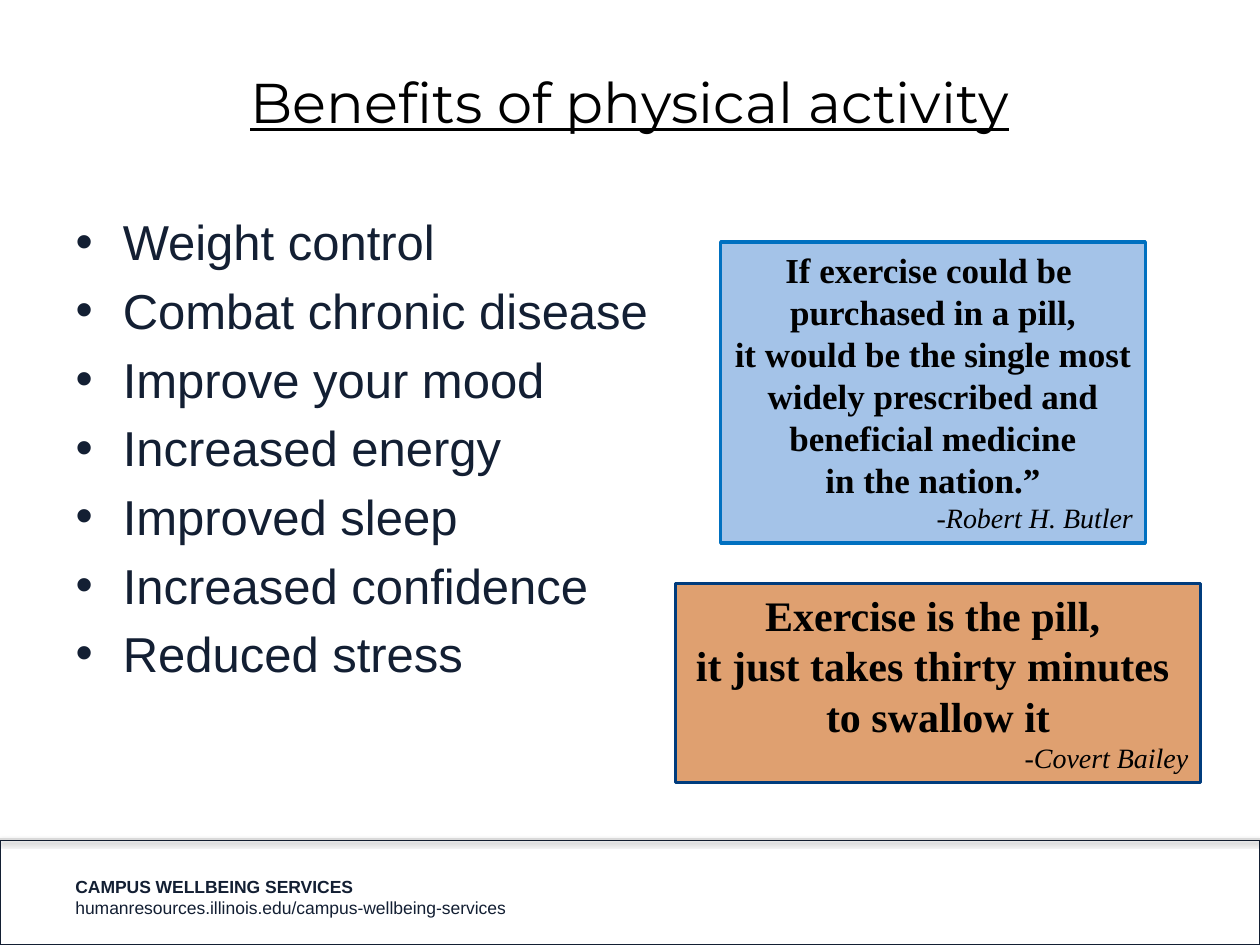
from dataclasses import dataclass

from lxml import etree
from pptx import Presentation
from pptx import util as u
from pptx.dml.color import RGBColor
from pptx.enum import shapes, text
from pptx.oxml import ns

NAVY = "131F33"
BLACK = "000000"
WHITE = "FFFFFF"
SERIF = "Times New Roman"
SLIDE_WIDTH, SLIDE_HEIGHT = u.Inches(10), u.Inches(7.5)


@dataclass(frozen=True)
class Box:
    """A place on the slide, in percent of its width and height."""
    left: float
    top: float
    width: float
    height: float

    def lengths(self) -> tuple[int, int, int, int]:
        return (round(SLIDE_WIDTH * self.left / 100),
                round(SLIDE_HEIGHT * self.top / 100),
                round(SLIDE_WIDTH * self.width / 100),
                round(SLIDE_HEIGHT * self.height / 100))


@dataclass(frozen=True)
class Quote:
    box: Box
    lines: tuple[str, ...]
    author: str
    size: int
    fill: str
    opacity: int
    border: str
    wrap: bool


TITLE_BOX = Box(5, 2.4, 90, 16.67)
LIST_BOX = Box(5, 21.07, 90, 66)
FOOTER_BOX = Box(0, 88.93, 100, 11.07)
RULE_BOX = Box(0, 88.8, 100, 0)
CONTACT_BOX = Box(5, 92, 38.3, 5.87)

BENEFITS = ("Weight control", "Combat chronic disease", "Improve your mood",
            "Increased energy", "Improved sleep", "Increased confidence",
            "Reduced stress")

QUOTES = (
    Quote(Box(57.2, 25.6, 33.7, 31.87),
          ("If exercise could be ", "purchased in a pill,",
           "it would be the single most", "widely prescribed and",
           "beneficial medicine", "in the nation.”"),
          "-Robert H. Butler", 20, "8EB4E3", 80, "0070C0", False),
    Quote(Box(53.6, 61.73, 41.7, 21.07),
          ("Exercise is the pill, ", "it just takes thirty minutes ",
           "to swallow it"),
          "-Covert Bailey", 24, "C85D0A", 58, "003C7D", True),
)


def colour(value: str) -> RGBColor:
    return RGBColor.from_string(value)


def place(shape, box: Box) -> None:
    shape.left, shape.top, shape.width, shape.height = box.lengths()


def format_font(font, color: str, **values) -> None:
    for name, value in values.items():
        setattr(font, name, u.Pt(value) if name == "size" else value)
    font.color.rgb = colour(color)


def add_paragraph(frame, index: int, words: str):
    paragraph = frame.paragraphs[0] if index == 0 else frame.add_paragraph()
    paragraph.add_run().text = words
    return paragraph


def set_line(line, color: str, width: float) -> None:
    line.color.rgb = colour(color)
    line.width = u.Pt(width)


def add_shadow(shape, opacity: int, blur: float, distance: float) -> None:
    """Cast a black shadow straight down."""
    properties = shape._element.spPr
    effects = etree.SubElement(properties, ns.qn("a:effectLst"))
    shadow = etree.SubElement(
        effects, ns.qn("a:outerShdw"), blurRad=str(u.Pt(blur)),
        dist=str(u.Pt(distance)), dir=str(90 * 60000), rotWithShape="0")
    black = etree.SubElement(shadow, ns.qn("a:srgbClr"), val=BLACK)
    etree.SubElement(black, ns.qn("a:alpha"), val=str(opacity * 1000))


def add_rectangle(slide, box: Box, fill: str, border: str, width: float):
    shape = slide.shapes.add_shape(shapes.MSO_SHAPE.RECTANGLE, *box.lengths())
    shape.fill.solid()
    shape.fill.fore_color.rgb = colour(fill)
    set_line(shape.line, border, width)
    return shape


def add_footer(slide) -> None:
    band = add_rectangle(slide, FOOTER_BOX, WHITE, NAVY, 0.75)
    add_shadow(band, 35, 3.1, 1.8)

    left, top, width, _ = RULE_BOX.lengths()
    rule = slide.shapes.add_connector(
        shapes.MSO_CONNECTOR.STRAIGHT, left, top, left + width, top)
    set_line(rule.line, "D9D9D9", 1)
    add_shadow(rule, 38, 3.1, 1.6)

    frame = slide.shapes.add_textbox(*CONTACT_BOX.lengths()).text_frame
    frame.word_wrap = True
    contact = ("CAMPUS WELLBEING SERVICES",
               "humanresources.illinois.edu/campus-wellbeing-services")
    for index, words in enumerate(contact):
        paragraph = add_paragraph(frame, index, words)
        format_font(paragraph.runs[0].font, NAVY, name="Arial", size=10,
                    bold=index == 0)


def fill_title(title) -> None:
    place(title, TITLE_BOX)
    paragraph = add_paragraph(title.text_frame, 0, "Benefits of physical activity")
    paragraph.alignment = text.PP_ALIGN.CENTER
    format_font(paragraph.runs[0].font, BLACK, name="Montserrat", size=32,
                underline=True)


def fill_benefits(body) -> None:
    """Fill the list; bullets and later gaps come from the template."""
    place(body, LIST_BOX)
    frame = body.text_frame
    frame.auto_size = text.MSO_AUTO_SIZE.NONE
    frame.margin_top = u.Inches(0.1)
    for index, benefit in enumerate(BENEFITS):
        paragraph = add_paragraph(frame, index, benefit)
        format_font(paragraph.runs[0].font, NAVY, name="Arial", size=28)
    frame.paragraphs[0].space_before = u.Pt(0)


def add_quote(slide, quote: Quote) -> None:
    shape = add_rectangle(slide, quote.box, quote.fill, quote.border, 2)
    shape.shadow.inherit = False
    fill_color = shape._element.spPr.find(
        f"{ns.qn('a:solidFill')}/{ns.qn('a:srgbClr')}")
    etree.SubElement(fill_color, ns.qn("a:alpha"), val=str(quote.opacity * 1000))

    frame = shape.text_frame
    frame.word_wrap = quote.wrap
    frame.auto_size = text.MSO_AUTO_SIZE.SHAPE_TO_FIT_TEXT
    frame.vertical_anchor = text.MSO_ANCHOR.TOP
    for index, words in enumerate((*quote.lines, quote.author)):
        is_author = index == len(quote.lines)
        paragraph = add_paragraph(frame, index, words)
        paragraph.alignment = (text.PP_ALIGN.RIGHT if is_author
                               else text.PP_ALIGN.CENTER)
        format_font(paragraph.runs[0].font, BLACK, name=SERIF,
                    size=16 if is_author else quote.size,
                    bold=not is_author, italic=is_author)


def main() -> None:
    presentation = Presentation()
    presentation.slide_width = SLIDE_WIDTH
    presentation.slide_height = SLIDE_HEIGHT
    slide = presentation.slides.add_slide(presentation.slide_layouts[1])
    add_footer(slide)
    fill_title(slide.shapes.title)
    fill_benefits(slide.placeholders[1])
    for quote in QUOTES:
        add_quote(slide, quote)
    presentation.save("out.pptx")


if __name__ == "__main__":
    main()
